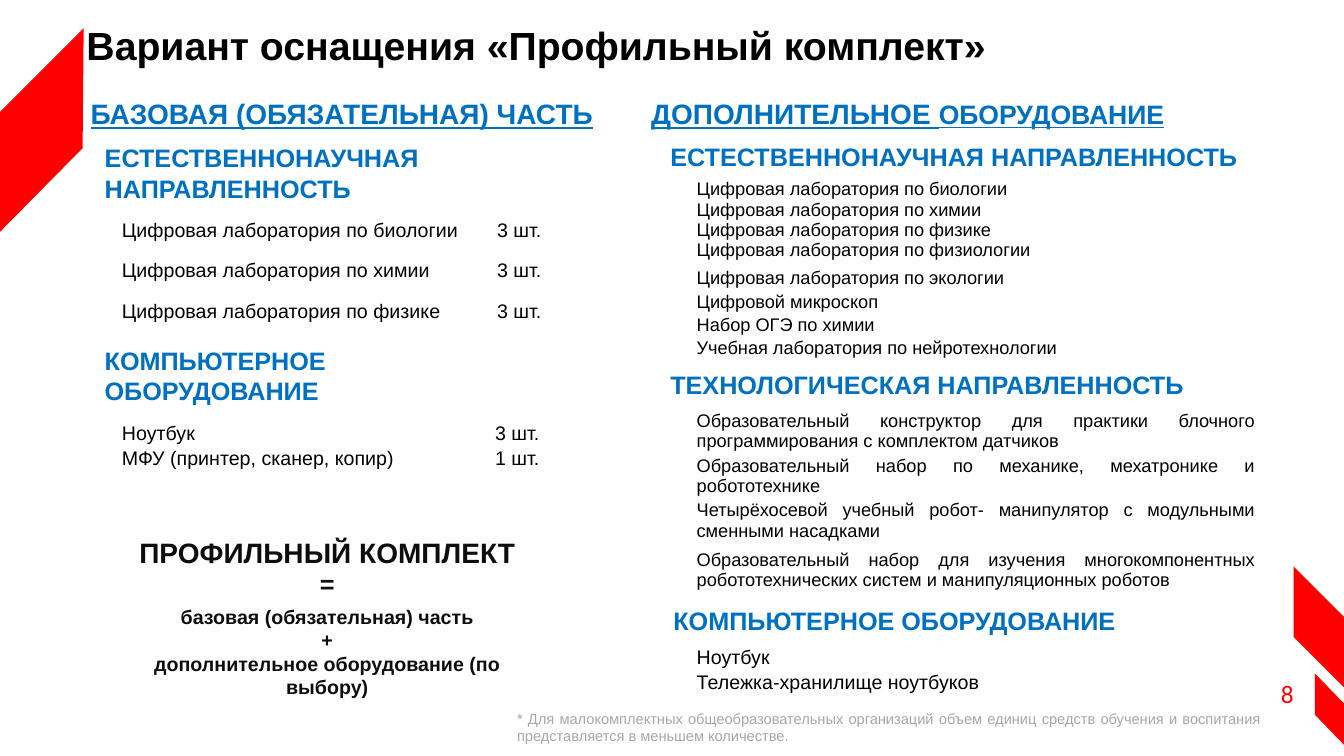
from lxml import etree
from pptx import Presentation
from pptx.dml.color import RGBColor
from pptx.enum.text import MSO_ANCHOR as Anchor, PP_ALIGN as Align
from pptx.oxml.ns import qn
from pptx.util import Inches, Pt

RED, BLUE, BLACK, DARK, GRAY = "FF0000", "0070C0", "000000", "0D0D0D", "A7A7A7"

presentation = Presentation()
presentation.slide_width = Inches(13.33)
presentation.slide_height = Inches(7.5)
slide = presentation.slides.add_slide(presentation.slide_layouts[6])


def add_text(box, lines, color, bold=True, align=Align.LEFT, anchor=Anchor.TOP,
             font="Arial", underline=False):
    """Add a text box; each line is a list of (text, size) runs."""
    shape = slide.shapes.add_textbox(*map(Inches, box))
    frame = shape.text_frame
    frame.word_wrap = True
    frame.vertical_anchor = anchor
    for index, runs in enumerate(lines):
        paragraph = frame.add_paragraph() if index else frame.paragraphs[0]
        paragraph.alignment = align
        for text, size in runs:
            run = paragraph.add_run()
            run.text = text
            run.font.name = font
            run.font.size = Pt(size)
            run.font.bold = bold
            run.font.underline = underline
            run.font.color.rgb = RGBColor.from_string(color)
    return frame


def add_equipment(left, top, widths, heights, rows, size, align=Align.LEFT,
                  anchor=Anchor.TOP):
    """Add a table without fills; each row is a name and a quantity."""
    table = slide.shapes.add_table(
        len(rows), 2, Inches(left), Inches(top),
        Inches(sum(widths)), Inches(sum(heights))).table
    table.first_row = table.horz_banding = False
    for column, width in zip(table.columns, widths):
        column.width = Inches(width)
    for row, height, texts in zip(table.rows, heights, rows):
        row.height = Inches(height)
        for cell, text in zip(row.cells, texts):
            cell.fill.background()
            cell.margin_left = cell.margin_right = cell.margin_top = Inches(0.01)
            cell.margin_bottom = 0
            cell.vertical_anchor = anchor
            cell.text_frame.text = text
            for paragraph in cell.text_frame.paragraphs:
                paragraph.alignment = align
                for run in paragraph.runs:
                    run.font.name = "Arial"
                    run.font.size = Pt(size)
                    run.font.color.rgb = RGBColor.from_string(BLACK)
                if not paragraph.runs:
                    # keeps an empty cell from stretching its row
                    end = etree.SubElement(paragraph._p, qn("a:endParaRPr"))
                    end.set("sz", str(size * 100))


# Red corner bands
for corners in (
    [(0, 2.3), (0, 1.11), (0.83, 0.28), (0.82, 1.47)],
    [(13.33, 6.82), (12.83, 6.32), (12.83, 5.62), (13.33, 6.12)],
    [(13.33, 7.39), (13.04, 7.09), (13.04, 6.68), (13.33, 6.98)],
):
    points = [(Inches(x), Inches(y)) for x, y in corners]
    builder = slide.shapes.build_freeform(*points[0])
    builder.add_line_segments(points[1:], close=True)
    band = builder.convert_to_shape()
    band.shadow.inherit = False
    band.fill.solid()
    band.fill.fore_color.rgb = RGBColor.from_string(RED)
    band.line.fill.background()

page_number = add_text((12.38, 6.68, 0.5, 0.4), [[("8", 18)]], RED, bold=False,
                       align=Align.RIGHT, font="Calibri")
page_number.margin_left = page_number.margin_right = Inches(0.05)

title = add_text((0.76, 0.26, 11.63, 0.46),
                 [[("Вариант оснащения «Профильный комплект»", 28)]],
                 BLACK, anchor=Anchor.MIDDLE)
title.paragraphs[0].line_spacing = 0.8

# Headings of the two parts
for box, runs in (
    ((0.8, 0.91, 5.38, 0.44), [("БАЗОВАЯ (ОБЯЗАТЕЛЬНАЯ) ЧАСТЬ", 20)]),
    ((6.36, 0.91, 5.59, 0.44), [("ДОПОЛНИТЕЛЬНОЕ ", 20), ("ОБОРУДОВАНИЕ", 19)]),
):
    add_text(box, [runs], BLUE, underline=True)

# Headings of the sections
SCIENCE = "ЕСТЕСТВЕННОНАУЧНАЯ НАПРАВЛЕННОСТЬ"
COMPUTERS = "КОМПЬЮТЕРНОЕ ОБОРУДОВАНИЕ"
for box, text in (
    ((0.94, 1.36, 5.41, 0.71), SCIENCE),
    ((0.94, 3.37, 3, 0.71), COMPUTERS),
    ((6.55, 1.35, 6.08, 0.4), SCIENCE),
    ((6.55, 3.61, 6.31, 0.4), "ТЕХНОЛОГИЧЕСКАЯ НАПРАВЛЕННОСТЬ"),
    ((6.58, 5.96, 4.82, 0.4), COMPUTERS),
):
    # the wide left heading breaks after its first word
    frame = add_text(box, [[(text, 18)]], BLUE, anchor=Anchor.MIDDLE)
    if box[0] == 0.94:
        frame.margin_right = Inches(box[2] - 3.7 if box[2] > 4 else 0.1)

# Base part
labs = [f"Цифровая лаборатория по {subject}"
        for subject in ("биологии", "химии", "физике", "физиологии", "экологии")]
add_equipment(1.2, 2.17, [3.72, 0.7], [0.4] * 3,
              [(lab, "3 шт.") for lab in labs[:3]], 14)
add_equipment(1.2, 4.18, [3.7, 0.72], [0.25] * 2,
              [("Ноутбук", "3 шт."), ("МФУ (принтер, сканер, копир)", "1 шт.")], 14)

# Additional equipment
add_equipment(6.9, 1.77, [4.47, 0.57], [0.85, 0.24, 0.22, 0.22, 0.24], [
    ("\n".join(labs[:4]), ""),
    (labs[4], ""),
    ("Цифровой микроскоп", ""),
    ("Набор ОГЭ по химии", ""),
    ("Учебная лаборатория по нейротехнологии", ""),
], 13)
add_equipment(6.9, 4.05, [5.55, 0.18], [0.44, 0.37, 0.37, 0.54], [
    ("Образовательный конструктор для практики блочного программирования "
     "с комплектом датчиков", ""),
    ("Образовательный набор по механике, мехатронике и робототехнике", ""),
    ("Четырёхосевой учебный робот- манипулятор с модульными "
     "сменными насадками", ""),
    ("Образовательный набор для изучения многокомпонентных "
     "робототехнических систем и манипуляционных роботов", ""),
], 13, Align.JUSTIFY, Anchor.MIDDLE)
add_equipment(6.9, 6.4, [3.96, 0.13], [0.24] * 2,
              [("Ноутбук", ""), ("Тележка-хранилище ноутбуков", "")],
              14, Align.JUSTIFY, Anchor.MIDDLE)

# Formula of the kit and the footnote
formula = add_text((1.2, 5.26, 4.09, 1.75), [
    [("ПРОФИЛЬНЫЙ КОМПЛЕКТ", 20)],
    [("=", 18)],
    [("базовая (обязательная) часть", 14)],
    [("+", 14)],
    [("дополнительное оборудование (по выбору)", 14)],
], DARK, align=Align.CENTER)
formula.paragraphs[2].space_before = Pt(4)
add_text((5.03, 6.99, 7.58, 0.47), [[(
    "* Для малокомплектных общеобразовательных организаций объем единиц средств "
    "обучения и воспитания представляется в меньшем количестве.", 10.5)]],
    GRAY, bold=False, align=Align.JUSTIFY)

presentation.save("out.pptx")
